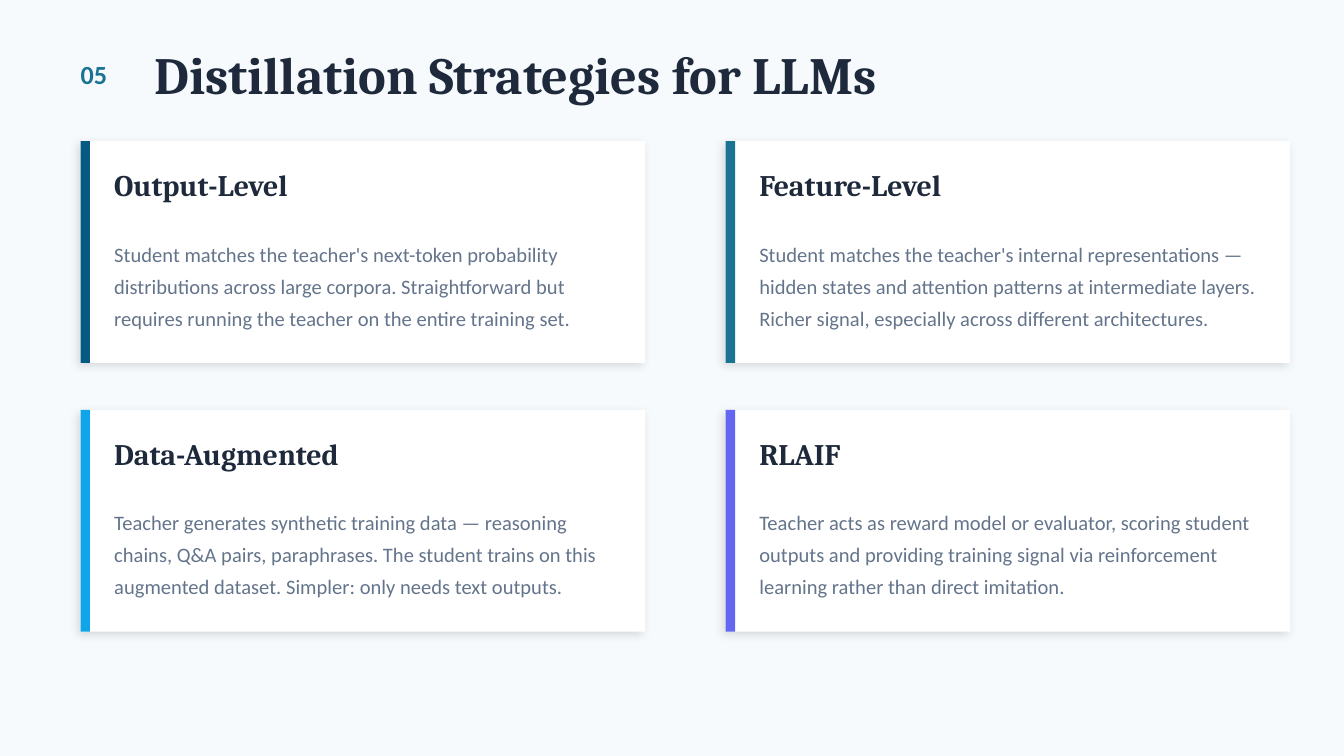
import dataclasses
import typing

import lxml.etree
import pptx
import pptx.dml.color
import pptx.enum.shapes
import pptx.enum.text
import pptx.oxml.ns
import pptx.util

Inches = pptx.util.Inches


@dataclasses.dataclass(frozen=True)
class Theme:
    back: str = "F7FAFC"
    card: str = "FFFFFF"
    ink: str = "1E293B"
    muted: str = "64748B"
    teal: str = "1C7293"
    navy: str = "065A82"
    sky: str = "0EA5E9"
    violet: str = "6366F1"
    shade: str = "000000"
    serif: str = "Cambria"
    sans: str = "Calibri"
    title: int = 28
    head: int = 16
    label: int = 14
    body: int = 11


@dataclasses.dataclass(frozen=True)
class Font:
    name: str
    size: int
    color: str
    bold: bool = True


@dataclasses.dataclass(frozen=True)
class Card:
    head: str
    body: str
    accent: str


class Box(typing.NamedTuple):
    left: float
    top: float
    width: float
    height: float

    def emu(self) -> list[int]:
        return [Inches(side) for side in self]


THEME = Theme()
TITLE = Font(THEME.serif, THEME.title, THEME.ink)
LABEL = Font(THEME.sans, THEME.label, THEME.teal)
HEAD = Font(THEME.serif, THEME.head, THEME.ink)
BODY = Font(THEME.sans, THEME.body, THEME.muted, False)

CARDS = [
    Card(
        "Output-Level",
        "Student matches the teacher's next-token probability distributions across "
        "large corpora. Straightforward but requires running the teacher on the "
        "entire training set.",
        THEME.navy,
    ),
    Card(
        "Feature-Level",
        "Student matches the teacher's internal representations — hidden states and "
        "attention patterns at intermediate layers. Richer signal, especially across "
        "different architectures.",
        THEME.teal,
    ),
    Card(
        "Data-Augmented",
        "Teacher generates synthetic training data — reasoning chains, Q&A pairs, "
        "paraphrases. The student trains on this augmented dataset. Simpler: only "
        "needs text outputs.",
        THEME.sky,
    ),
    Card(
        "RLAIF",
        "Teacher acts as reward model or evaluator, scoring student outputs and "
        "providing training signal via reinforcement learning rather than direct "
        "imitation.",
        THEME.violet,
    ),
]


def rgb(code: str) -> pptx.dml.color.RGBColor:
    return pptx.dml.color.RGBColor.from_string(code)


def write(shape, text: str, font: Font, space: float = 1.0) -> None:
    frame = shape.text_frame
    frame.word_wrap = True
    frame.auto_size = pptx.enum.text.MSO_AUTO_SIZE.NONE
    frame.vertical_anchor = pptx.enum.text.MSO_ANCHOR.MIDDLE
    frame.margin_left = frame.margin_right = 0
    frame.margin_top = frame.margin_bottom = 0
    para = frame.paragraphs[0]
    para.alignment = pptx.enum.text.PP_ALIGN.LEFT
    para.line_spacing = space
    run = para.add_run()
    run.text = text
    run.font.name = font.name
    run.font.size = pptx.util.Pt(font.size)
    run.font.bold = font.bold
    run.font.color.rgb = rgb(font.color)


def label(slide, box: Box, text: str, font: Font, space: float = 1.0) -> None:
    write(slide.shapes.add_textbox(*box.emu()), text, font, space)


def panel(slide, box: Box, color: str):
    shape = slide.shapes.add_shape(
        pptx.enum.shapes.MSO_SHAPE.RECTANGLE, *box.emu()
    )
    shape.shadow.inherit = False
    shape.fill.solid()
    shape.fill.fore_color.rgb = rgb(color)
    shape.line.fill.background()
    return shape


def shade(shape) -> None:
    qn = pptx.oxml.ns.qn
    effects = shape.element.spPr.find(qn("a:effectLst"))
    outer = lxml.etree.SubElement(
        effects,
        qn("a:outerShdw"),
        blurRad=str(pptx.util.Pt(5)),
        dist=str(pptx.util.Pt(2)),
        dir=str(135 * 60000),
        algn="bl",
        rotWithShape="0",
    )
    color = lxml.etree.SubElement(outer, qn("a:srgbClr"), val=THEME.shade)
    lxml.etree.SubElement(color, qn("a:alpha"), val="12000")


def draw(slide, card: Card, left: float, top: float) -> None:
    shade(panel(slide, Box(left, top, 4.2, 1.65), THEME.card))
    panel(slide, Box(left, top, 0.07, 1.65), card.accent)
    label(slide, Box(left + 0.25, top + 0.15, 3.7, 0.35), card.head, HEAD)
    label(slide, Box(left + 0.25, top + 0.55, 3.7, 1), card.body, BODY, 1.3)


def main() -> None:
    deck = pptx.Presentation()
    deck.slide_width = Inches(10)
    deck.slide_height = Inches(10 * 9 / 16)
    slide = deck.slides.add_slide(deck.slide_layouts.get_by_name("Title Only"))
    fill = slide.background.fill
    fill.solid()
    fill.fore_color.rgb = rgb(THEME.back)

    title = slide.shapes.title
    title.left, title.top, title.width, title.height = Box(1.15, 0.3, 7, 0.5).emu()
    write(title, "Distillation Strategies for LLMs", TITLE)
    label(slide, Box(0.6, 0.35, 0.6, 0.4), "05", LABEL)

    for index, card in enumerate(CARDS):
        row, col = divmod(index, 2)
        draw(slide, card, 0.6 + 4.8 * col, 1.05 + 2 * row)
    deck.save("out.pptx")


if __name__ == "__main__":
    main()
